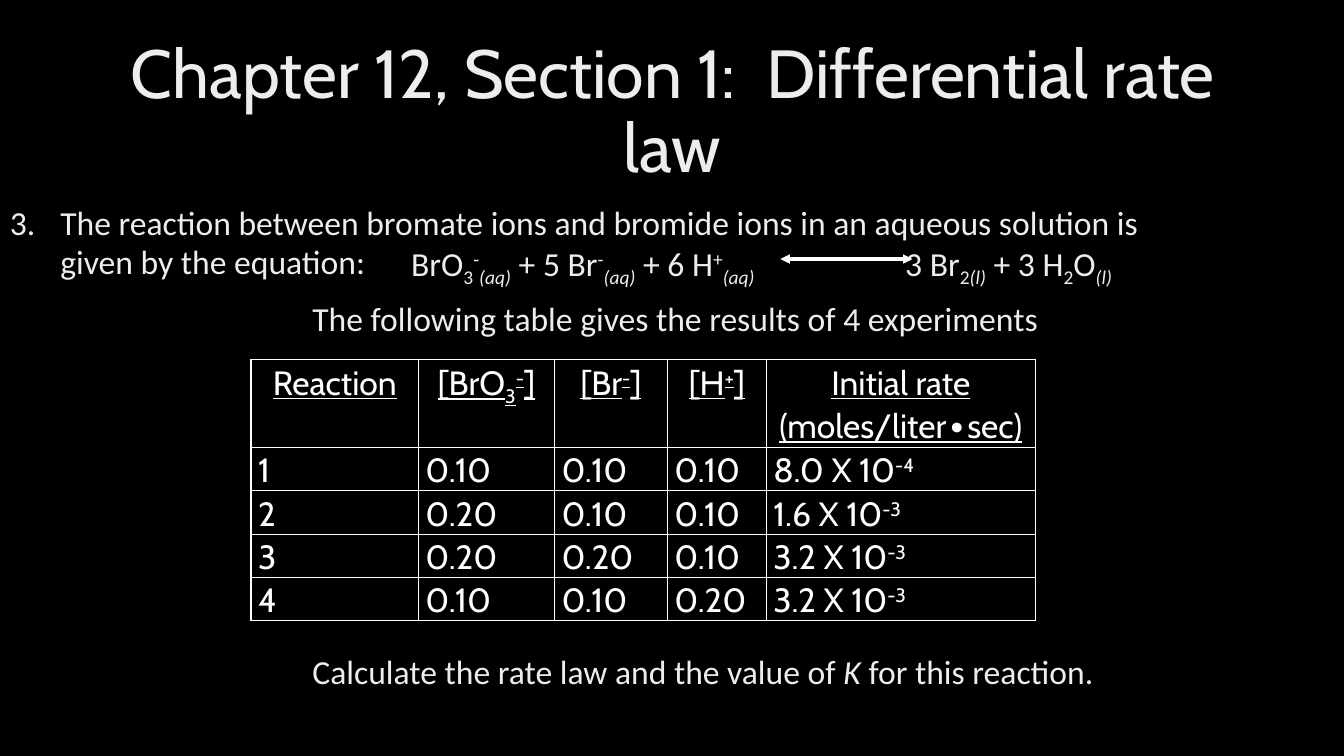
"""Build the differential rate law slide with its equation and data table."""
from lxml import etree
from pptx import Presentation
from pptx.dml.color import RGBColor
from pptx.enum.shapes import MSO_CONNECTOR
from pptx.enum.text import MSO_ANCHOR, MSO_AUTO_SIZE, PP_ALIGN
from pptx.oxml.ns import qn
from pptx.util import Inches, Pt

PALE, WHITE = "EDEDED", "FFFFFF"
BASELINES = {"sub": "-25000", "sup": "30000"}


def paint(target, color):
    target.rgb = RGBColor.from_string(color)


def write(para, parts, font="Calibri", size=24, color=PALE, underline=None):
    for text, *styles in parts:
        span = para.add_run()
        span.text = text
        span.font.name = font
        span.font.size = Pt(size)
        span.font.underline = underline
        paint(span.font.fill.fore_color if span.font.fill.solid() else span.font.color, color)
        for style in styles:
            if style == "italic":
                span.font.italic = True
            else:
                span.font._element.set("baseline", BASELINES[style])


deck = Presentation()
deck.slide_width, deck.slide_height = Inches(13.33), Inches(7.5)
page = deck.slides.add_slide(deck.slide_layouts[5])
page.background.fill.solid()
paint(page.background.fill.fore_color, "000000")

title = page.shapes.title
title.left, title.top = Inches(0.92), Inches(0.4)
title.width, title.height = Inches(11.5), Inches(1.45)
title.text_frame.auto_size = MSO_AUTO_SIZE.NONE
title.text_frame.vertical_anchor = MSO_ANCHOR.MIDDLE
heading = title.text_frame.paragraphs[0]
heading.alignment = PP_ALIGN.CENTER
heading.line_spacing = 0.9
write(heading, [("Chapter 12, Section 1:  Differential rate law",)], "Cabin", 48.6)

aqueous, liquid = ("(aq)", "sub", "italic"), ("(l)", "sub", "italic")
question = [("The reaction between bromate ions and bromide ions in an aqueous "
             "solution is given by the equation:",)]
reactants = [("BrO",), ("3", "sub"), ("-", "sup"), aqueous, (" + 5 Br",), ("-", "sup"),
             aqueous, (" + 6 H",), ("+", "sup"), aqueous]
products = [("3 Br",), ("2", "sub"), liquid, (" + 3 H",), ("2", "sub"), ("O",), liquid]
intro = [("The following table gives the results of 4 experiments",)]
task = [("Calculate the rate law and the value of",), (" K", "italic"),
        (" for this reaction.",)]

for left, top, width, height, parts in [
    (0, 1.97, 11.82, 0.9, question),
    (3.98, 2.36, 3.7, 0.5, reactants),
    (8.88, 2.36, 2.6, 0.5, products),
    (3, 2.91, 8.5, 0.5, intro),
    (3, 6.41, 8.5, 0.5, task),
]:
    box = page.shapes.add_textbox(Inches(left), Inches(top), Inches(width), Inches(height))
    box.text_frame.word_wrap = True
    para = box.text_frame.paragraphs[0]
    if parts is question:
        para.line_spacing = 0.98
        layout = para._p.get_or_add_pPr()
        layout.set("marL", str(Inches(0.5)))
        layout.set("indent", str(Inches(-0.5)))
        bullet_color = etree.SubElement(layout, qn("a:buClr"))
        etree.SubElement(bullet_color, qn("a:srgbClr"), val=PALE)
        etree.SubElement(layout, qn("a:buFont"), typeface="Calibri")
        etree.SubElement(layout, qn("a:buAutoNum"), type="arabicPeriod", startAt="3")
    write(para, parts)

arrow = page.shapes.add_connector(
    MSO_CONNECTOR.STRAIGHT, Inches(7.74), Inches(2.57), Inches(9.05), Inches(2.57))
arrow.line.width = Pt(2.25)
paint(arrow.line.color, WHITE)
for end in ("a:headEnd", "a:tailEnd"):
    etree.SubElement(arrow.line._get_or_add_ln(), qn(end), type="triangle")
etree.SubElement(arrow._element.spPr, qn("a:effectLst"))

header = [
    [("Reaction",)],
    [("[BrO",), ("3", "sub"), ("-", "sup"), ("]",)],
    [("[Br",), ("-", "sup"), ("]",)],
    [("[H",), ("+", "sup"), ("]",)],
    [("Initial rate (moles/liter∙sec)",)],
]
experiments = [
    ("1", "0.10", "0.10", "0.10", "8.0", "-4"),
    ("2", "0.20", "0.10", "0.10", "1.6", "-3"),
    ("3", "0.20", "0.20", "0.10", "3.2", "-3"),
    ("4", "0.10", "0.10", "0.20", "3.2", "-3"),
]
rows = [header]
for *values, rate, power in experiments:
    rows.append([[(value,)] for value in values] + [[(f"{rate} X 10",), (power, "sup")]])

table = page.shapes.add_table(
    len(rows), len(header), Inches(2.49), Inches(3.57), Inches(7.78), Inches(2.6)).table
table.first_row = table.horz_banding = False
for column, width in zip(table.columns, (1.66, 1.35, 1.12, 0.98, 2.67)):
    column.width = Inches(width)
for row_index, row in enumerate(rows):
    is_header = row_index == 0
    table.rows[row_index].height = Inches(0.87 if is_header else 0.43)
    for column_index, parts in enumerate(row):
        cell = table.cell(row_index, column_index)
        cell.margin_left = cell.margin_right = Inches(0.07)
        cell.margin_top = cell.margin_bottom = 0
        for side in ("a:lnL", "a:lnR", "a:lnT", "a:lnB"):
            border = etree.SubElement(cell._tc.get_or_add_tcPr(), qn(side), w=str(Pt(1)))
            border_fill = etree.SubElement(border, qn("a:solidFill"))
            etree.SubElement(border_fill, qn("a:srgbClr"), val=WHITE)
        cell.fill.background()
        para = cell.text_frame.paragraphs[0]
        para.alignment = PP_ALIGN.CENTER if is_header else PP_ALIGN.LEFT
        para.line_spacing = 1.07
        write(para, parts, "Cabin", 24, WHITE, is_header)

deck.save("out.pptx")
